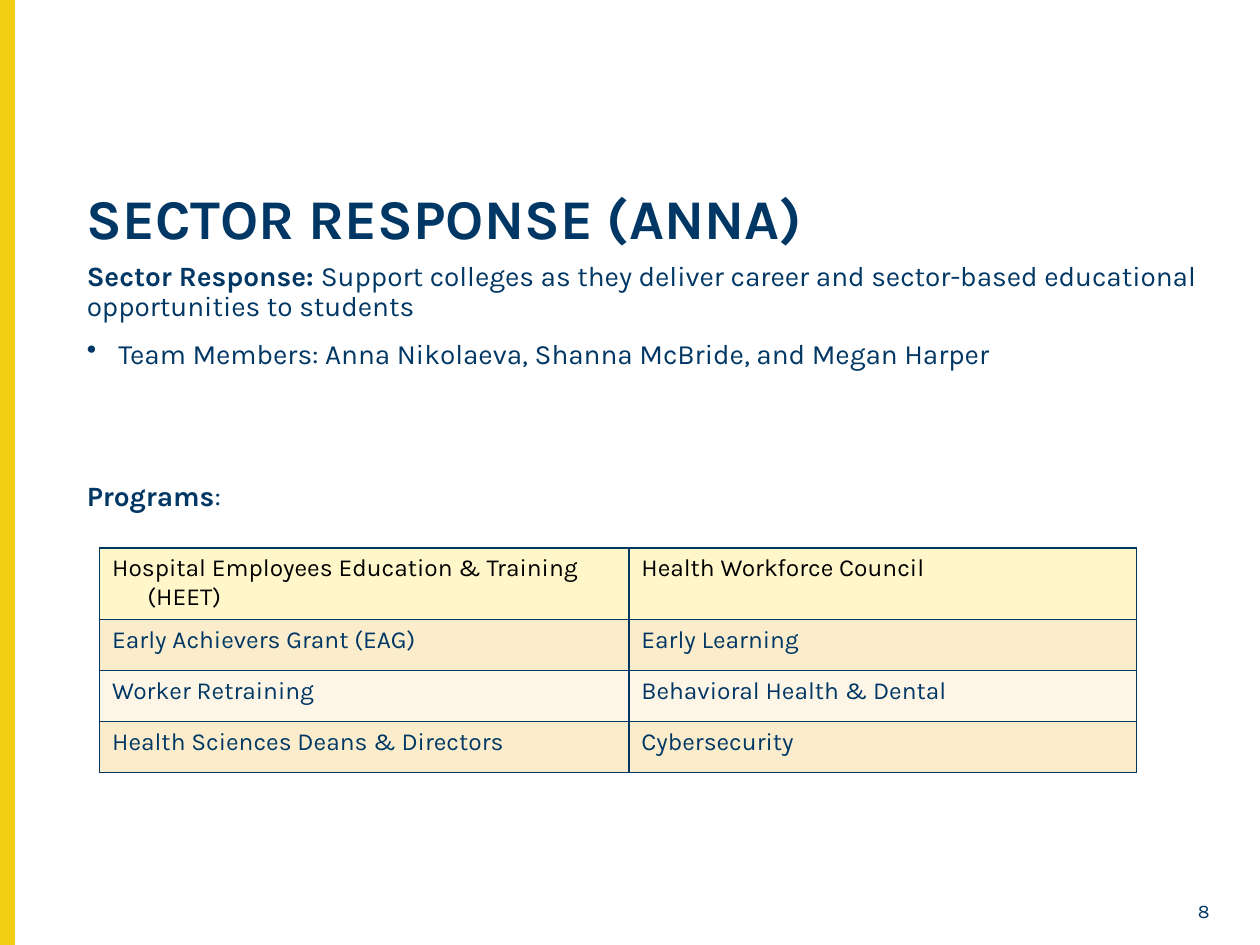
from dataclasses import dataclass

from lxml import etree
from pptx import Presentation
from pptx import util as u
from pptx.dml.color import RGBColor
from pptx.enum import shapes, text
from pptx.oxml import ns

NAVY = RGBColor(0x00, 0x37, 0x64)
BLACK = RGBColor(0x00, 0x00, 0x00)
GOLD = RGBColor(0xF4, 0xCE, 0x12)
HEADER_FILL = RGBColor(0xFF, 0xF6, 0xCA)
ODD_FILL = RGBColor(0xFB, 0xED, 0xCC)
EVEN_FILL = RGBColor(0xFD, 0xF6, 0xE7)
FONT = "Karla"

# The slide is a grid of 100 columns by 75 rows of square units.
UNIT = u.Inches(0.1)
COLUMNS, ROWS = 100, 75
LEFT, TEXT_WIDTH = 5.9, 91.2
TITLE_TOP, BODY_TOP = 14.8, 20.3


@dataclass(frozen=True)
class Area:
    left: float
    top: float
    width: float
    height: float

    def lengths(self) -> tuple:
        return tuple(units(n) for n in (self.left, self.top, self.width, self.height))


@dataclass(frozen=True)
class Span:
    words: str
    size: float = 16
    bold: bool = False
    color: RGBColor = NAVY


@dataclass(frozen=True)
class Para:
    spans: tuple
    space_before: float = 0
    line_spacing: float = 0.9
    indent: float = 0
    bullet: str = ""
    align: text.PP_ALIGN = text.PP_ALIGN.LEFT


TITLE = Para((Span("SECTOR RESPONSE (ANNA)", 32, True),))
BODY = (
    Para((
        Span("Sector Response: ", bold=True),
        Span("Support colleges as they deliver career and sector-based "
             "educational opportunities to students"),
    )),
    Para((Span("Team Members: Anna Nikolaeva, Shanna McBride, and Megan Harper"),),
         space_before=10, indent=0.25, bullet="•"),
    Para((Span("Programs", bold=True), Span(":")), space_before=64),
)
PAGE_NUMBER = Para((Span("8", 11),), line_spacing=1, align=text.PP_ALIGN.RIGHT)
PROGRAMS = (
    ("Hospital Employees Education & Training (HEET)", "Health Workforce Council"),
    ("Early Achievers Grant (EAG)", "Early Learning"),
    ("Worker Retraining", "Behavioral Health & Dental"),
    ("Health Sciences Deans & Directors", "Cybersecurity"),
)
PROGRAM_COLUMNS = (42, 40.3)


def units(count: float) -> int:
    return round(count * UNIT)


def write(frame, paras: tuple) -> None:
    for index, content in enumerate(paras):
        para = frame.add_paragraph() if index else frame.paragraphs[0]
        para.alignment = content.align
        para.line_spacing = content.line_spacing
        para.space_before = u.Pt(content.space_before)
        if content.indent:
            properties = para._p.get_or_add_pPr()
            properties.set("marL", str(u.Inches(content.indent)))
            properties.set("indent", str(-u.Inches(content.indent)))
            if content.bullet:
                bullet = etree.SubElement(properties, ns.qn("a:buChar"))
                bullet.set("char", content.bullet)
        for span in content.spans:
            run = para.add_run()
            run.text = span.words
            run.font.name = FONT
            run.font.size = u.Pt(span.size)
            run.font.bold = span.bold
            run.font.color.rgb = span.color


def add_text(page, area: Area, *paras: Para, anchor=text.MSO_ANCHOR.TOP) -> None:
    frame = page.shapes.add_textbox(*area.lengths()).text_frame
    frame.word_wrap = True
    frame.vertical_anchor = anchor
    write(frame, paras)


def add_side_bar(page) -> None:
    bar = page.shapes.add_shape(shapes.MSO_SHAPE.RECTANGLE,
                                *Area(0, 0, 1.1, ROWS).lengths())
    bar.shadow.inherit = False
    bar.fill.solid()
    bar.fill.fore_color.rgb = GOLD
    bar.line.color.rgb = GOLD
    bar.line.width = u.Pt(1)


def add_borders(cell) -> None:
    properties = cell._tc.get_or_add_tcPr()
    for position, side in enumerate(("lnL", "lnR", "lnT", "lnB")):
        line = etree.Element(ns.qn(f"a:{side}"), w=str(u.Pt(1)))
        fill = etree.SubElement(line, ns.qn("a:solidFill"))
        etree.SubElement(fill, ns.qn("a:srgbClr"), val=str(NAVY))
        properties.insert(position, line)


def add_programs(page, area: Area) -> None:
    table = page.shapes.add_table(len(PROGRAMS), len(PROGRAM_COLUMNS),
                                  *area.lengths()).table
    for column, width in zip(table.columns, PROGRAM_COLUMNS):
        column.width = units(width)
    for row, names in enumerate(PROGRAMS):
        fill = (ODD_FILL if row % 2 else EVEN_FILL) if row else HEADER_FILL
        color = NAVY if row else BLACK
        for column, name in enumerate(names):
            cell = table.cell(row, column)
            cell.fill.solid()
            cell.fill.fore_color.rgb = fill
            add_borders(cell)
            write(cell.text_frame, (Para((Span(name, 14, color=color),),
                                         line_spacing=1, indent=0.28),))


def main() -> None:
    deck = Presentation()
    deck.slide_width, deck.slide_height = units(COLUMNS), units(ROWS)
    page = deck.slides.add_slide(deck.slide_layouts[6])
    add_side_bar(page)
    add_text(page, Area(LEFT, TITLE_TOP, TEXT_WIDTH, BODY_TOP - TITLE_TOP), TITLE,
             anchor=text.MSO_ANCHOR.MIDDLE)
    add_text(page, Area(LEFT, BODY_TOP, TEXT_WIDTH, ROWS - BODY_TOP), *BODY)
    add_text(page, Area(91.9, 70.9, 5.1, 2.6), PAGE_NUMBER)
    add_programs(page, Area(7.9, 43.5, sum(PROGRAM_COLUMNS), 16.2))
    deck.save("out.pptx")


if __name__ == "__main__":
    main()
